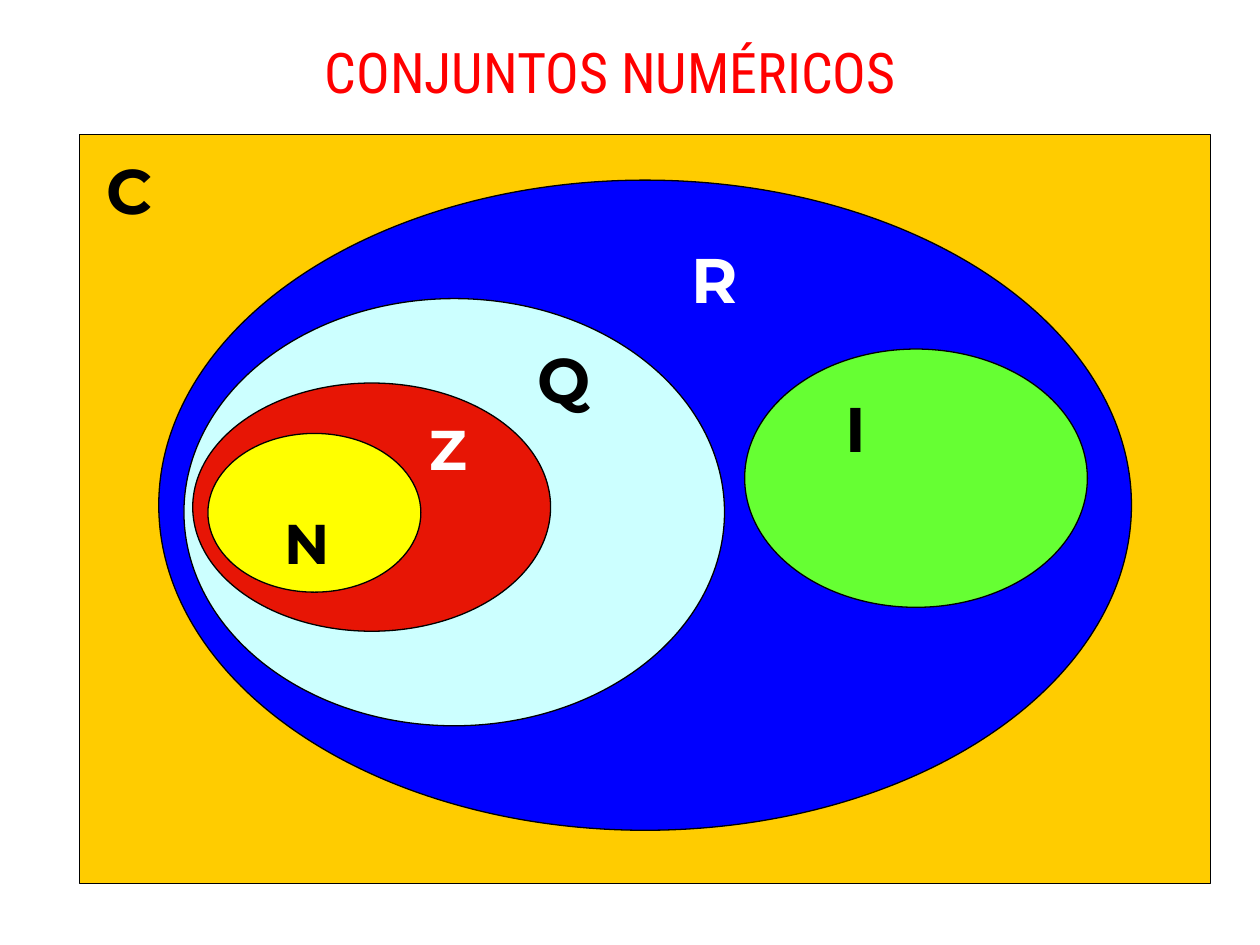
import pptx
import pptx.util
import pptx.dml.color
import pptx.enum.shapes
import pptx.enum.text

WIDTH, HEIGHT = 10, 7.5
TITLE = ("CONJUNTOS NUMÉRICOS", (1.3, 0.25, 7.09, 0.55), 32, "FF0000")
RECT = pptx.enum.shapes.MSO_SHAPE.RECTANGLE
OVAL = pptx.enum.shapes.MSO_SHAPE.OVAL

SETS = [
    ("C", RECT, (0.63, 1.07, 8.98, 5.94), "FFCC00", (0.75, 1.15), 36, "000000"),
    ("R", OVAL, (1.26, 1.43, 7.72, 5.16), "0000FF", (5.39, 1.86), 36, "FFFFFF"),
    ("I", OVAL, (5.91, 2.77, 2.72, 2.05), "66FF33", (6.61, 3.04), 36, "000000"),
    ("Q", OVAL, (1.46, 2.37, 4.29, 3.39), "CCFFFF", (4.17, 2.65), 36, "000000"),
    ("Z", OVAL, (1.53, 3.04, 2.84, 1.97), "E71505", (3.31, 3.24), 32, "FFFFFF"),
    ("N", OVAL, (1.65, 3.44, 1.69, 1.26), "FFFF00", (2.16, 3.99), 32, "000000"),
]


def color(value):
    return pptx.dml.color.RGBColor.from_string(value)


def inches(box):
    return [pptx.util.Inches(v) for v in box]


def add_region(slide, kind, box, fill):
    sp = slide.shapes.add_shape(kind, *inches(box))
    sp.shadow.inherit = False
    sp.fill.solid()
    sp.fill.fore_color.rgb = color(fill)
    sp.line.color.rgb = color("000000")
    sp.line.width = pptx.util.Pt(0.75)


def add_text(slide, text, box, size, ink, font, bold=False):
    tf = slide.shapes.add_textbox(*inches(box)).text_frame
    tf.text = text
    tf.word_wrap = True
    p = tf.paragraphs[0]
    r = p.runs[0]
    r.font.name = font
    r.font.size = pptx.util.Pt(size)
    r.font.bold = bold
    r.font.color.rgb = color(ink)
    return tf


prs = pptx.Presentation()
prs.slide_width, prs.slide_height = inches((WIDTH, HEIGHT))
slide = prs.slides.add_slide(prs.slide_layouts[6])

for name, kind, box, fill, corner, size, ink in SETS:
    add_region(slide, kind, box, fill)

for name, kind, box, fill, corner, size, ink in SETS:
    label_box = (*corner, 0.67, size / 50)
    tf = add_text(slide, name, label_box, size, ink, "Montserrat", True)
    tf.auto_size = pptx.enum.text.MSO_AUTO_SIZE.SHAPE_TO_FIT_TEXT

title = add_text(slide, *TITLE, "Roboto Condensed")
title.word_wrap = False
title.paragraphs[0].alignment = pptx.enum.text.PP_ALIGN.CENTER

prs.save("out.pptx")
